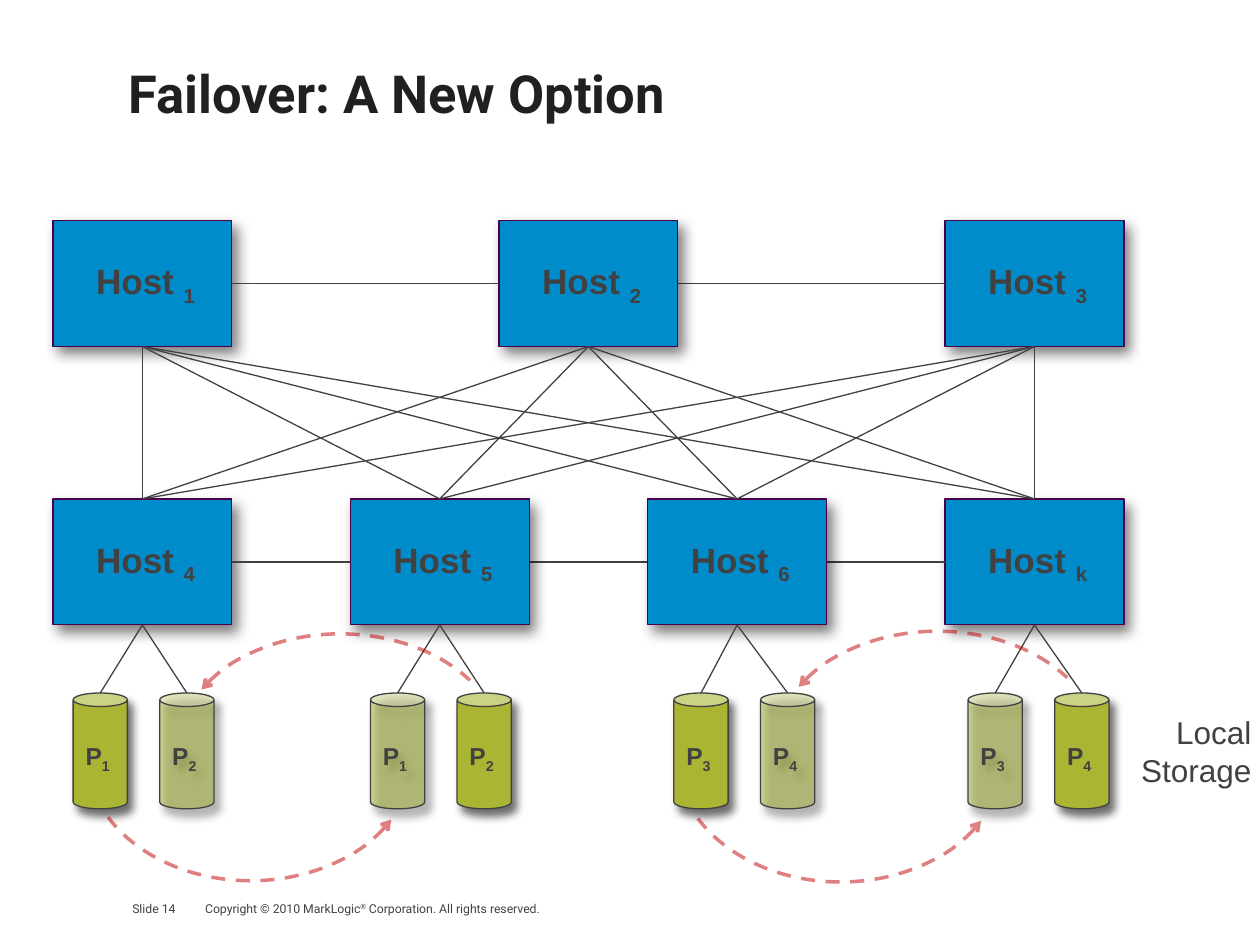
"""Build the failover slide: meshed hosts above replicated local storage."""
from dataclasses import dataclass

from lxml import etree
from pptx import Presentation
from pptx.dml.color import RGBColor
from pptx.enum.dml import MSO_LINE
from pptx.enum.shapes import MSO_CONNECTOR, MSO_SHAPE
from pptx.enum.text import MSO_ANCHOR, MSO_AUTO_SIZE, PP_ALIGN
from pptx.oxml.ns import qn
from pptx.util import Pt

RECTANGLE, CAN, ARC = MSO_SHAPE.RECTANGLE, MSO_SHAPE.CAN, MSO_SHAPE.ARC
STRAIGHT = MSO_CONNECTOR.STRAIGHT
DASH = MSO_LINE.DASH
MIDDLE = MSO_ANCHOR.MIDDLE
GROW, FIXED = MSO_AUTO_SIZE.SHAPE_TO_FIT_TEXT, MSO_AUTO_SIZE.NONE
LEFT, CENTER, RIGHT = PP_ALIGN.LEFT, PP_ALIGN.CENTER, PP_ALIGN.RIGHT
TOP_SITE, LEFT_SITE, BOTTOM_SITE, RIGHT_SITE = range(4)

COLORS = {
    "title": "202020", "ink": "414141", "host": "008CCB", "host_line": "480048",
    "disk": "A9B533", "failover": "C00000", "shadow": "000000",
}
HOST_LEFT, HOST_PITCH, HOST_WIDTH, HOST_HEIGHT = 30.24, 169.92, 102.24, 72
UPPER_ROW, LOWER_ROW = 126, 285.12
DISK_TOP, DISK_WIDTH, DISK_HEIGHT, DISK_STEP = 396, 31, 66.2, 49.5


@dataclass
class Host:
    """A host, placed by its column and row."""
    label: str
    column: float
    top: float


@dataclass
class Disk:
    """A partition on a host's local storage."""
    label: str
    host: str
    left: float
    replica: bool


@dataclass
class FailoverArc:
    """A dashed arrow between a partition and its replica."""
    left: float
    top: float
    height: float
    sweep_end: float
    flipped: bool


HOSTS_BEHIND = [Host("1", 0, UPPER_ROW), Host("3", 3, UPPER_ROW),
                Host("4", 0, LOWER_ROW), Host("k", 3, LOWER_ROW)]
HOSTS_BETWEEN = [Host("5", 1, LOWER_ROW), Host("6", 2, LOWER_ROW),
                 Host("2", 1.5, UPPER_ROW)]
DISK_GROUPS = [("4", 41.8, "12", "2"), ("5", 211.7, "12", "1"),
               ("6", 385.1, "34", "4"), ("k", 553.2, "34", "3")]
ARCS = [FailoverArc(49.7, 360, 143.3, 93.94, False),
        FailoverArc(386.7, 360.7, 143.3, 93.94, False),
        FailoverArc(100.8, 362.2, 136.1, 90.46, True),
        FailoverArc(442.1, 360.7, 136.1, 90.46, True)]


def rgb(name: str) -> RGBColor:
    """Return a named colour."""
    return RGBColor.from_string(COLORS[name])


def set_font(font, name: str, size: float, color: str = "ink", bold: bool = False) -> None:
    """Set the face, size, colour and weight of a font."""
    font.name, font.size, font.bold = name, Pt(size), bold
    font.color.rgb = rgb(color)


def set_opacity(shape, color_query: str, percent: int) -> None:
    """Make a fill or line colour of a shape translucent."""
    color = shape._element.spPr.xpath(color_query)[0]
    etree.SubElement(color, qn("a:alpha"), val=str(percent * 1000))


def add_shadow(shape, percent: int, blur: float) -> None:
    """Give a shape a soft shadow towards the lower right."""
    shape.shadow.inherit = False
    effects = shape._element.spPr.find(qn("a:effectLst"))
    outer = etree.SubElement(effects, qn("a:outerShdw"), blurRad=str(Pt(blur)),
                             dist=str(Pt(5)), dir=str(53 * 60000), rotWithShape="0")
    color = etree.SubElement(outer, qn("a:srgbClr"), val=COLORS["shadow"])
    etree.SubElement(color, qn("a:alpha"), val=str(percent * 1000))


def add_label(box, text: str, subscript: str, size: float, align, margins: tuple) -> None:
    """Write a bold label with a subscript in a box."""
    frame = box.text_frame
    frame.word_wrap, frame.vertical_anchor = False, MIDDLE
    (frame.margin_left, frame.margin_top,
     frame.margin_right, frame.margin_bottom) = map(Pt, margins)
    para = frame.paragraphs[0]
    para.alignment = align
    set_font(para.font, "Arial", size, bold=True)
    para.add_run().text = text
    span = para.add_run()
    span.text = subscript
    span.font._element.set("baseline", "-25000")


def add_block(page, kind, area: tuple, fill: str, line: str):
    """Add a filled and outlined shape."""
    box = page.shapes.add_shape(kind, *map(Pt, area))
    box.fill.solid()
    box.fill.fore_color.rgb = rgb(fill)
    box.line.color.rgb = rgb(line)
    box.line.width = Pt(0.75)
    return box


def add_host(page, host: Host):
    """Draw a host."""
    area = (HOST_LEFT + host.column * HOST_PITCH, host.top, HOST_WIDTH, HOST_HEIGHT)
    box = add_block(page, RECTANGLE, area, "host", "host_line")
    add_shadow(box, 51, 8)
    add_label(box, "Host ", host.label, 20, CENTER, (3.6, 3.6, 0, 3.6))
    return box


def add_disk(page, disk: Disk) -> None:
    """Draw a partition, paler when it is a replica."""
    area = (disk.left, DISK_TOP, DISK_WIDTH, DISK_HEIGHT)
    can = add_block(page, CAN, area, "disk", "ink")
    if disk.replica:
        set_opacity(can, "a:solidFill/a:srgbClr", 50)
    add_shadow(can, 56, 5)
    add_label(can, "P", disk.label, 14, LEFT, (7.2, 7.2, 7.2, 3.6))


def add_link(page, start, start_site: int, end=None, end_site: int = 0,
             point: tuple = (0, 0)) -> None:
    """Draw a line from a host to another host or to a point."""
    link = page.shapes.add_connector(STRAIGHT, 0, 0, *map(Pt, point))
    link.begin_connect(start, start_site)
    if end is not None:
        link.end_connect(end, end_site)
    link.line.color.rgb = rgb("ink")
    link.line.width = Pt(0.75)
    etree.SubElement(link._element.spPr, qn("a:effectLst"))


def add_arc(page, arc: FailoverArc) -> None:
    """Draw a dashed failover arrow."""
    shape = page.shapes.add_shape(ARC, Pt(arc.left), Pt(arc.top), Pt(187.2), Pt(arc.height))
    shape.adjustments[0], shape.adjustments[1] = 14.74, arc.sweep_end
    shape.shadow.inherit = False
    shape.fill.background()
    shape.line.color.rgb = rgb("failover")
    shape.line.width = Pt(2)
    shape.line.dash_style = DASH
    set_opacity(shape, "a:ln/a:solidFill/a:srgbClr", 50)
    properties = shape._element.spPr
    etree.SubElement(properties.find(qn("a:ln")), qn("a:headEnd"), type="arrow")
    if arc.flipped:
        frame = properties.find(qn("a:xfrm"))
        frame.set("flipH", "1")
        frame.set("flipV", "1")


def add_text(page, area: tuple, lines: list, font: str, size: float, align=LEFT,
             wrap: bool = True):
    """Add a text box with one paragraph per line of spans."""
    box = page.shapes.add_textbox(*map(Pt, area))
    frame = box.text_frame
    frame.word_wrap, frame.auto_size = wrap, GROW
    for index, spans in enumerate(lines):
        para = frame.add_paragraph() if index else frame.paragraphs[0]
        para.alignment = align
        set_font(para.font, font, size)
        for text in spans:
            para.add_run().text = text
    return box


def main() -> None:
    """Build and save the deck."""
    deck = Presentation()
    deck.slide_width, deck.slide_height = Pt(720), Pt(540)
    page = deck.slides.add_slide(deck.slide_layouts[5])

    title = page.shapes.title
    title.left, title.top, title.width, title.height = map(Pt, (66.24, 21.6, 512.64, 62.64))
    title.text_frame.text = "Failover: A New Option"
    title.text_frame.vertical_anchor, title.text_frame.auto_size = MIDDLE, FIXED
    title.text_frame.paragraphs[0].alignment = LEFT
    set_font(title.text_frame.paragraphs[0].font, "Roboto", 30, "title", True)

    number = add_text(page, (75.6, 514.8, 46.8, 8.64), [["Slide 14"]], "Roboto", 7).text_frame
    number.margin_left = number.margin_top = number.margin_right = number.margin_bottom = 0
    rights = ["Copyright © 2010 MarkLogic", "®", " Corporation. All rights reserved."]
    notice = add_text(page, (110.16, 511.2, 360, 15.84), [rights], "Roboto", 7)
    notice.text_frame.paragraphs[0].runs[1].font._element.set("baseline", "30000")

    boxes = {host.label: add_host(page, host) for host in HOSTS_BEHIND}
    for first, last in ("13", "4k"):
        add_link(page, boxes[first], RIGHT_SITE, boxes[last], LEFT_SITE)
    boxes.update({host.label: add_host(page, host) for host in HOSTS_BETWEEN})
    for upper in "123":
        for lower in "456k":
            add_link(page, boxes[upper], BOTTOM_SITE, boxes[lower], TOP_SITE)

    disks = [Disk(label, host, left + slot * DISK_STEP, label == replica)
             for host, left, labels, replica in DISK_GROUPS
             for slot, label in enumerate(labels)]
    for disk in disks:
        add_disk(page, disk)
        add_link(page, boxes[disk.host], BOTTOM_SITE,
                 point=(disk.left + DISK_WIDTH / 2, DISK_TOP))
    add_text(page, (643.7, 403.9, 78.5, 51.1), [["Local"], ["Storage"]], "Arial", 18,
             RIGHT, False)
    for arc in ARCS:
        add_arc(page, arc)
    deck.save("out.pptx")


if __name__ == "__main__":
    main()
